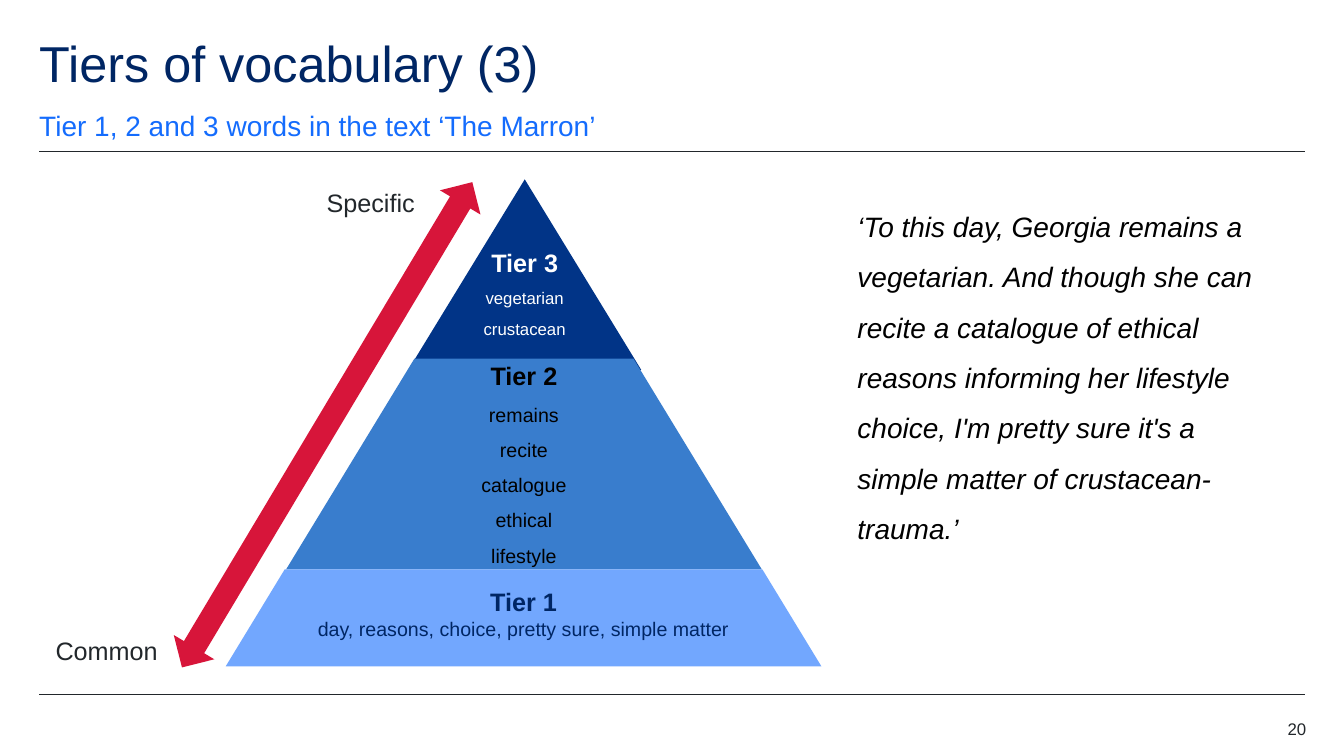
from lxml import etree
from pptx import Presentation
from pptx.dml.color import RGBColor
from pptx.enum.shapes import MSO_CONNECTOR, MSO_SHAPE
from pptx.enum.text import MSO_ANCHOR, PP_ALIGN
from pptx.oxml.ns import qn
from pptx.util import Cm, Pt

LINE = MSO_CONNECTOR.STRAIGHT
PEAK, TRAP = MSO_SHAPE.ISOSCELES_TRIANGLE, MSO_SHAPE.TRAPEZOID
ARROW = MSO_SHAPE.UP_DOWN_ARROW
TOP, MIDDLE, BOTTOM = MSO_ANCHOR.TOP, MSO_ANCHOR.MIDDLE, MSO_ANCHOR.BOTTOM
LEFT, CENTER, RIGHT = PP_ALIGN.LEFT, PP_ALIGN.CENTER, PP_ALIGN.RIGHT

FONT = "Arial"
COLORS = {
    "navy": "002664", "blue": "146CFD", "dark": "013487", "mid": "397DCD",
    "light": "72A7FE", "red": "D7153A", "ink": "22272B",
    "black": "000000", "white": "FFFFFF",
}
EDGE, END = 0.99, 32.89
SLOPE = 0.609
PAD = (0.25, 0.13, 0.25, 0.13)


def color(name):
    return RGBColor.from_string(COLORS[name])


def write(frame, texts, tint, anchor=TOP, pad=(0, 0, 0, 0)):
    """Fill a frame with (text, font values, paragraph values) items."""
    frame.word_wrap = True
    frame.vertical_anchor = anchor
    for side, gap in zip(("left", "top", "right", "bottom"), pad):
        setattr(frame, f"margin_{side}", Cm(gap))
    for i, (text, face, form) in enumerate(texts):
        para = frame.add_paragraph() if i else frame.paragraphs[0]
        para.text = text
        for key, value in form.items():
            setattr(para, key, value)
        font = para.runs[0].font
        for key, value in {"name": FONT, **face}.items():
            setattr(font, key, value)
        font.color.rgb = color(tint)


def add_text(slide, box, text, size, tint, anchor=TOP, pad=(0, 0, 0, 0),
             italic=False, **form):
    label = slide.shapes.add_textbox(*map(Cm, box))
    face = {"size": Pt(size), "italic": italic}
    write(label.text_frame, [(text, face, {"alignment": LEFT, **form})],
          tint, anchor, pad)


def add_rule(slide, y):
    rule = slide.shapes.add_connector(LINE, Cm(EDGE), Cm(y), Cm(END), Cm(y))
    rule.line.color.rgb = color("ink")
    rule.line.width = Pt(0.5)
    etree.SubElement(rule._element.spPr, qn("a:effectLst"))


def add_solid(slide, kind, box, fill):
    solid = slide.shapes.add_shape(kind, *map(Cm, box))
    solid.shadow.inherit = False
    solid.fill.solid()
    solid.fill.fore_color.rgb = color(fill)
    solid.line.fill.background()
    return solid


def add_tier(slide, kind, box, fill, tint, head, words, size, space,
             anchor, base):
    tier = add_solid(slide, kind, box, fill)
    if kind == TRAP:
        tier.adjustments[0] = SLOPE
    texts = [(head, {"size": Pt(18), "bold": True}, {"alignment": CENTER})]
    texts += [(word, {"size": Pt(size), "bold": False},
               {"alignment": CENTER, "line_spacing": space})
              for word in words]
    write(tier.text_frame, texts, tint, anchor, (*PAD[:3], base))


def main():
    deck = Presentation()
    deck.slide_width, deck.slide_height = Cm(33.87), Cm(19.05)
    slide = deck.slides.add_slide(deck.slide_layouts[6])

    # Rules and headings
    for y in (3.81, 17.5):
        add_rule(slide, y)
    add_text(slide, (EDGE, 0.99, 27.99, 1.52), "Tiers of vocabulary (3)",
             36, "navy", line_spacing=0.9)
    add_text(slide, (EDGE, 2.72, 27.99, 0.86),
             "Tier 1, 2 and 3 words in the text ‘The Marron’",
             20, "blue", BOTTOM, line_spacing=1.5, space_after=Pt(12))

    # Pyramid
    add_tier(slide, PEAK, (10.29, 4.52, 5.87, 4.8), "dark", "white",
             "Tier 3", ["vegetarian crustacean"], 12, 1.5, BOTTOM, 0.79)
    add_tier(slide, TRAP, (7.21, 9.04, 11.99, 5.31), "mid", "black",
             "Tier 2",
             ["remains", "recite", "catalogue", "ethical", "lifestyle"],
             14, 1.5, MIDDLE, 1.1)
    add_tier(slide, TRAP, (5.69, 14.35, 15.01, 2.44), "light", "navy",
             "Tier 1", ["day, reasons, choice, pretty sure, simple matter"],
             14, 1.0, MIDDLE, 0.53)

    # Scale from common to specific
    scale = add_solid(slide, ARROW, (7.65, 3.58, 1.19, 14.25), "red")
    scale.rotation = 30.9
    add_text(slide, (8.23, 4.72, 2.44, 1.14), "Specific", 18, "ink")
    add_text(slide, (1.4, 16, 2.67, 1.14), "Common", 18, "ink")

    # Quotation and slide number
    add_text(slide, (21.36, 4.72, 10.54, 9.07),
             "‘To this day, Georgia remains a vegetarian. And though she can "
             "recite a catalogue of ethical reasons informing her lifestyle "
             "choice, I'm pretty sure it's a simple matter of "
             "crustacean-trauma.’",
             20, "black", pad=PAD, italic=True,
             line_spacing=1.5, space_after=Pt(12))
    add_text(slide, (30.91, 18.11, 2.01, 0.51), "20", 12, "ink",
             alignment=RIGHT)

    deck.save("out.pptx")


if __name__ == "__main__":
    main()
